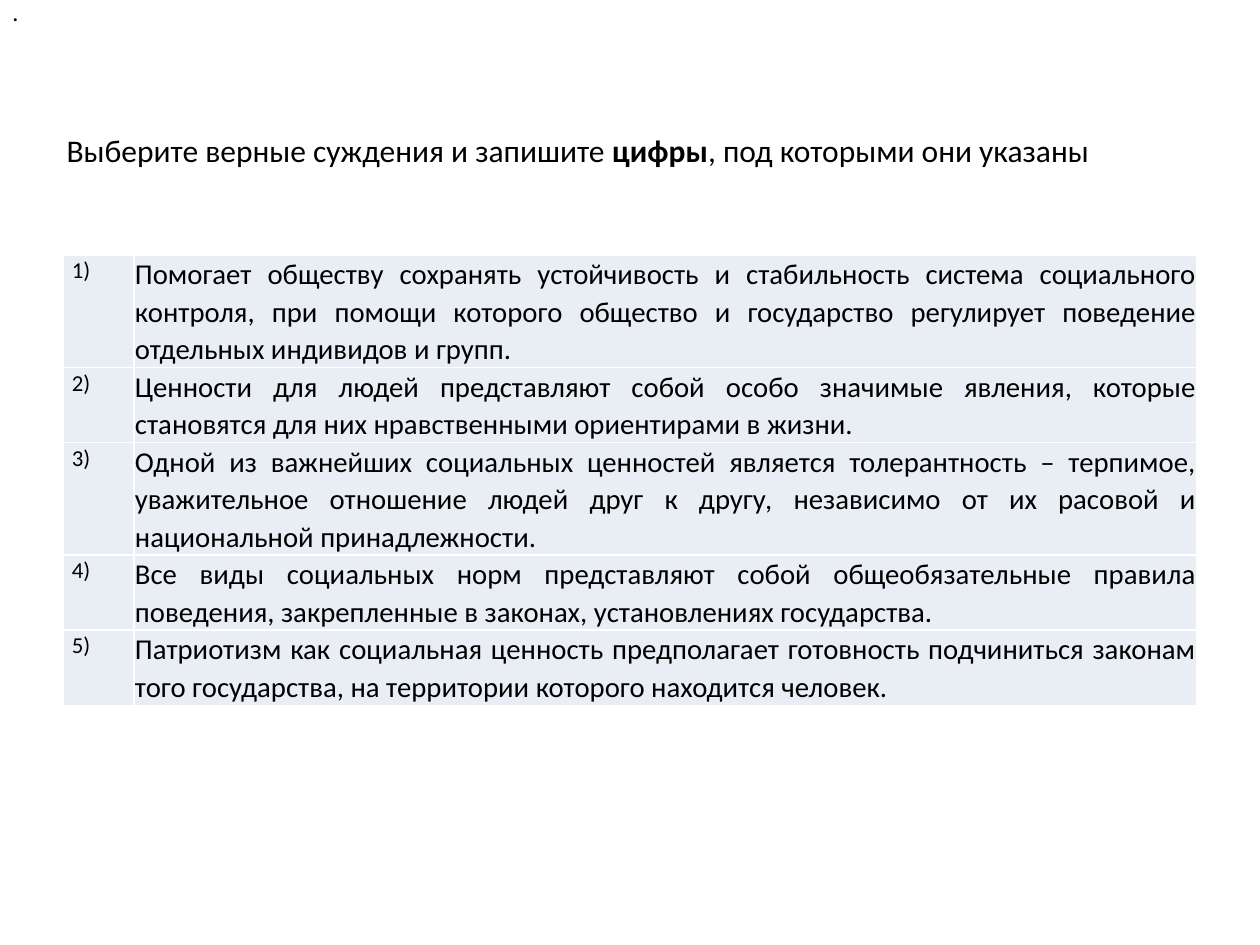
from dataclasses import dataclass

from lxml.etree import SubElement
from pptx import Presentation
from pptx.dml.color import RGBColor
from pptx.enum.text import MSO_ANCHOR, MSO_AUTO_SIZE, PP_ALIGN
from pptx.oxml.ns import qn
from pptx.table import _Cell
from pptx.text.text import _Paragraph
from pptx.util import Emu, Pt

EMU_PER_INCH = 914400
PX_PER_INCH = 126
LINE_HEIGHT = 37
FONT = "Calibri"
BLACK = RGBColor(0x00, 0x00, 0x00)
WHITE = RGBColor(0xFF, 0xFF, 0xFF)
PALE_BLUE = RGBColor(0xE9, 0xED, 0xF4)


@dataclass(frozen=True)
class Judgement:
    text: str
    lines: int


@dataclass(frozen=True)
class CellStyle:
    size: float
    inset: int
    anchor: MSO_ANCHOR


NUMBER_STYLE = CellStyle(13, 9, MSO_ANCHOR.TOP)
JUDGEMENT_STYLE = CellStyle(16.4, 1, MSO_ANCHOR.MIDDLE)
JUDGEMENTS = [
    Judgement("Помогает обществу сохранять устойчивость и стабильность система социального контроля, "
              "при помощи которого общество и государство регулирует поведение отдельных индивидов и групп.", 3),
    Judgement("Ценности для людей представляют собой особо значимые явления, которые становятся для них "
              "нравственными ориентирами в жизни.", 2),
    Judgement("Одной из важнейших социальных ценностей является толерантность – терпимое, уважительное "
              "отношение людей друг к другу, независимо от их расовой и национальной принадлежности.", 3),
    Judgement("Все виды социальных норм представляют собой общеобязательные правила поведения, "
              "закрепленные в законах, установлениях государства.", 2),
    Judgement("Патриотизм как социальная ценность предполагает готовность подчиниться законам того "
              "государства, на территории которого находится человек.", 2),
]


def px(length: int) -> Emu:
    """Turn a length in px into EMU."""
    return Emu(round(length * EMU_PER_INCH / PX_PER_INCH))


def add_run(paragraph: _Paragraph, text: str, size: float, bold: bool = False) -> None:
    """Add one formatted run to a paragraph."""
    run = paragraph.add_run()
    run.text = text
    run.font.name = FONT
    run.font.size = Pt(size)
    run.font.bold = bold
    run.font.color.rgb = BLACK


def add_borders(cell: _Cell, color: RGBColor, width: float) -> None:
    """Draw all four borders of a cell."""
    properties = cell._tc.get_or_add_tcPr()
    for side in ("a:lnL", "a:lnR", "a:lnT", "a:lnB"):
        border = SubElement(properties, qn(side), w=str(Pt(width)))
        SubElement(SubElement(border, qn("a:solidFill")), qn("a:srgbClr"), val=str(color))


def fill_cell(cell: _Cell, text: str, style: CellStyle) -> None:
    """Format a table cell and write its text."""
    add_borders(cell, WHITE, 1)
    cell.fill.solid()
    cell.fill.fore_color.rgb = PALE_BLUE
    cell.margin_left = cell.margin_right = px(style.inset)
    cell.margin_top = cell.margin_bottom = 0
    cell.vertical_anchor = style.anchor
    paragraph = cell.text_frame.paragraphs[0]
    paragraph.alignment = PP_ALIGN.JUSTIFY
    paragraph.line_spacing = 1.07
    add_run(paragraph, text, style.size)


def add_judgements(slide, left: int, top: int, widths: tuple[int, int]) -> None:
    """Add the table of numbered judgements."""
    height = LINE_HEIGHT * sum(judgement.lines for judgement in JUDGEMENTS)
    table = slide.shapes.add_table(
        len(JUDGEMENTS), len(widths), px(left), px(top), px(sum(widths)), px(height)
    ).table
    table.first_row = False
    table.horz_banding = False
    for column, width in zip(table.columns, widths):
        column.width = px(width)
    for index, judgement in enumerate(JUDGEMENTS):
        table.rows[index].height = px(LINE_HEIGHT * judgement.lines)
        fill_cell(table.cell(index, 0), f"{index + 1})", NUMBER_STYLE)
        fill_cell(table.cell(index, 1), judgement.text, JUDGEMENT_STYLE)


def add_dot(slide) -> None:
    """Add the full stop in the top corner."""
    dot = slide.shapes.add_textbox(px(0), px(-9), px(32), px(81))
    dot.text_frame.word_wrap = False
    add_run(dot.text_frame.paragraphs[0], ".", 14)


def write_task(slide) -> None:
    """Place the title and write the task in it."""
    task = slide.shapes.title
    task.left, task.top, task.width, task.height = px(54), px(125), px(1121), px(50)
    frame = task.text_frame
    frame.word_wrap = True
    frame.auto_size = MSO_AUTO_SIZE.NONE
    frame.vertical_anchor = MSO_ANCHOR.TOP
    paragraph = frame.paragraphs[0]
    paragraph.alignment = PP_ALIGN.LEFT
    add_run(paragraph, "Выберите верные суждения и запишите ", 18)
    add_run(paragraph, "цифры", 18, bold=True)
    add_run(paragraph, ", под которыми они указаны", 18)


def main() -> None:
    """Build and save the slide."""
    presentation = Presentation()
    presentation.slide_width = px(1260)
    presentation.slide_height = px(945)
    slide = presentation.slides.add_slide(presentation.slide_layouts.get_by_name("Title Only"))
    add_judgements(slide, 63, 255, (71, 1063))
    add_dot(slide)
    write_task(slide)
    presentation.save("out.pptx")


if __name__ == "__main__":
    main()
